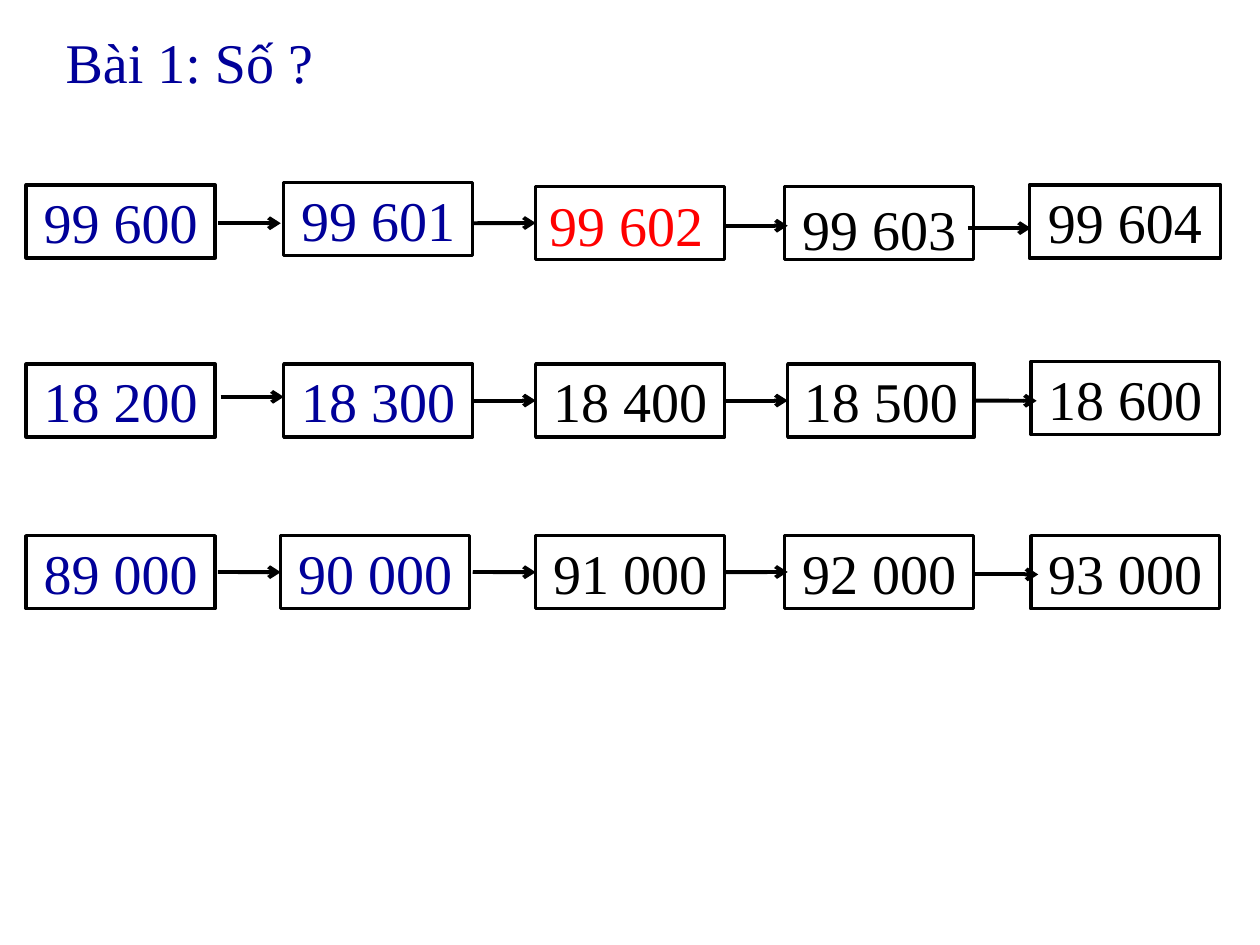
from dataclasses import dataclass
from typing import Optional

import pptx
import pptx.dml.color
import pptx.enum.shapes
import pptx.enum.text
import pptx.oxml
import pptx.oxml.ns
import pptx.util
from pptx.util import Cm, Pt

FONT = "Times New Roman"
NAVY, RED, BLACK = "000099", "FF0000", "000000"
BOX_W, BOX_H = 3.81, 1.47
ARROW_LEN = 1.27
JOIN_GAP = 0.04  # arrow ends this close (cm) to a side's middle are joined to it


@dataclass
class Box:
    x: float
    y: float
    text: str
    color: str = BLACK
    w: float = BOX_W
    label_at: Optional[tuple[float, float]] = None  # separate text box, if any


@dataclass
class Arrow:
    x: float
    y: float


ROWS = [
    ([Box(0.53, 3.73, "99 600", NAVY),
      Box(5.72, 3.68, "99 601", NAVY),
      Box(10.8, 3.76, "99 602", RED, label_at=(10.72, 3.78)),
      Box(15.82, 3.76, "99 603", label_at=(15.82, 3.86)),
      Box(20.75, 3.73, "99 604", w=3.86)],
     [Arrow(4.39, 4.5), Arrow(9.53, 4.5), Arrow(14.61, 4.55), Arrow(19.51, 4.6)]),
    ([Box(0.53, 7.34, "18 200", NAVY),
      Box(5.72, 7.34, "18 300", NAVY),
      Box(10.8, 7.34, "18 400"),
      Box(15.88, 7.34, "18 500", w=3.76),
      Box(20.78, 7.29, "18 600")],
     [Arrow(4.45, 8), Arrow(9.53, 8.08), Arrow(14.61, 8.08), Arrow(19.63, 8.08)]),
    ([Box(0.53, 10.8, "89 000", NAVY),
      Box(5.66, 10.8, "90 000", NAVY),
      Box(10.8, 10.8, "91 000"),
      Box(15.82, 10.8, "92 000"),
      Box(20.78, 10.8, "93 000")],
     [Arrow(4.39, 11.53), Arrow(9.53, 11.53), Arrow(14.61, 11.53), Arrow(19.66, 11.58)]),
]


def rgb(value: str) -> pptx.dml.color.RGBColor:
    return pptx.dml.color.RGBColor.from_string(value)


def write(sp, text: str, color: str, align, anchor) -> None:
    tf = sp.text_frame
    tf.word_wrap = False
    tf.auto_size = pptx.enum.text.MSO_AUTO_SIZE.NONE
    tf.vertical_anchor = anchor
    p = tf.paragraphs[0]
    p.text = text
    p.alignment = align
    p.font.name = FONT
    p.font.size = Pt(32)
    p.font.color.rgb = rgb(color)


def add_title(s, text: str) -> None:
    sp = s.shapes.title
    sp.left, sp.top, sp.width, sp.height = Cm(1.07), Cm(0.43), Cm(5.51), Cm(1.63)
    write(sp, text, NAVY, pptx.enum.text.PP_ALIGN.LEFT, pptx.enum.text.MSO_ANCHOR.TOP)


def add_box(s, box: Box):
    sp = s.shapes.add_shape(pptx.enum.shapes.MSO_SHAPE.RECTANGLE,
                            Cm(box.x), Cm(box.y), Cm(box.w), Cm(BOX_H))
    sp.shadow.inherit = False
    sp.fill.background()
    sp.line.color.rgb = rgb(BLACK)
    sp.line.width = Pt(2)
    label = sp
    if box.label_at:
        x, y = box.label_at
        label = s.shapes.add_textbox(Cm(x), Cm(y), Cm(BOX_W), Cm(BOX_H))
    write(label, box.text, box.color, pptx.enum.text.PP_ALIGN.CENTER,
          pptx.enum.text.MSO_ANCHOR.MIDDLE)
    return sp


def touches(x: float, y: float, side_x: float, box: Box) -> bool:
    """Tell whether a point lies at the middle of a box's left or right side."""
    return max(abs(x - side_x), abs(y - box.y - BOX_H / 2)) < JOIN_GAP


def add_arrow(s, arrow: Arrow, source: Box, target: Box, source_sp, target_sp) -> None:
    end_x = arrow.x + ARROW_LEN
    line = s.shapes.add_connector(pptx.enum.shapes.MSO_CONNECTOR.STRAIGHT,
                                  Cm(arrow.x), Cm(arrow.y), Cm(end_x), Cm(arrow.y))
    if touches(arrow.x, arrow.y, source.x + source.w, source):
        line.begin_connect(source_sp, 3)
    if touches(end_x, arrow.y, target.x, target):
        line.end_connect(target_sp, 1)
    line.line.color.rgb = rgb(BLACK)
    line.line.width = Pt(2.25)
    ln = line.line._get_or_add_ln()
    ln.append(pptx.oxml.parse_xml(
        f'<a:tailEnd {pptx.oxml.ns.nsdecls("a")} type="arrow"/>'))
    ln.addnext(pptx.oxml.parse_xml(f'<a:effectLst {pptx.oxml.ns.nsdecls("a")}/>'))


def main() -> None:
    prs = pptx.Presentation()
    prs.slide_width, prs.slide_height = Cm(25.4), Cm(19.05)
    s = prs.slides.add_slide(prs.slide_layouts.get_by_name("Title Only"))
    add_title(s, "Bài 1: Số ?")
    for boxes, arrows in ROWS:
        shapes = [add_box(s, box) for box in boxes]
        for i, arrow in enumerate(arrows):
            add_arrow(s, arrow, boxes[i], boxes[i + 1], shapes[i], shapes[i + 1])
    prs.save("out.pptx")


if __name__ == "__main__":
    main()
